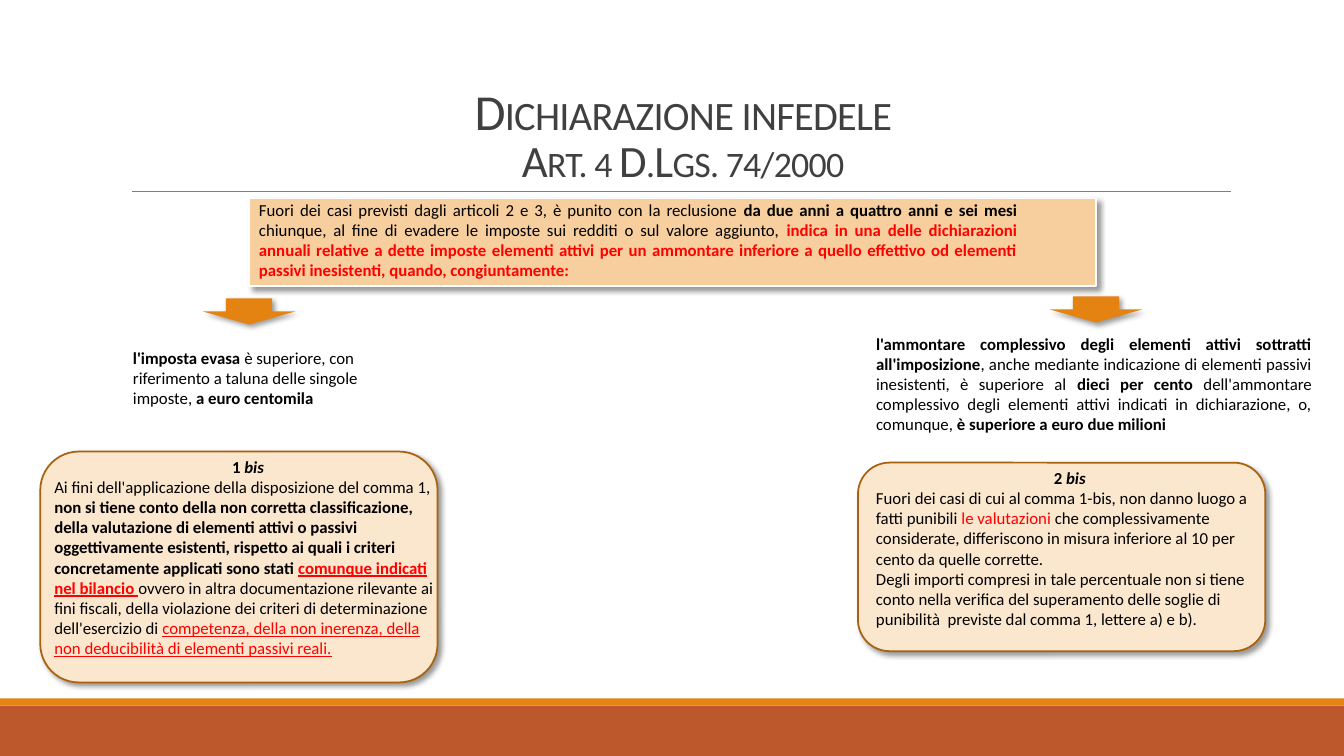
"""Build the slide on the false tax return offence and its thresholds."""
import lxml.etree
import pptx
import pptx.dml.color
import pptx.enum.shapes
import pptx.enum.text
import pptx.oxml.ns
import pptx.util

Inches = pptx.util.Inches
Pt = pptx.util.Pt
RGBColor = pptx.dml.color.RGBColor
Shape = pptx.enum.shapes.MSO_SHAPE
Align = pptx.enum.text.PP_ALIGN
qn = pptx.oxml.ns.qn

BLACK = RGBColor(0x00, 0x00, 0x00)
WHITE = RGBColor(0xFF, 0xFF, 0xFF)
RED = RGBColor(0xFF, 0x00, 0x00)
GREY = RGBColor(0x80, 0x80, 0x80)
DARK_GREY = RGBColor(0x40, 0x40, 0x40)
ORANGE = RGBColor(0xE4, 0x83, 0x12)
RUST = RGBColor(0xBD, 0x58, 0x2C)
BROWN = RGBColor(0xA9, 0x61, 0x0D)
PEACH = RGBColor(0xF7, 0xCE, 0x9D)
CREAM = RGBColor(0xFB, 0xE6, 0xCE)

FONT = "Calibri"
PLAIN = {}
BOLD = {"bold": True}
BOLD_ITALIC = {"bold": True, "italic": True}
UNDERLINED = {"underline": True}
BOLD_UNDERLINED = {"bold": True, "underline": True}

OFFENCE = [(Align.JUSTIFY, [
    ("Fuori dei casi previsti dagli articoli 2 e 3, è punito con la reclusione ", PLAIN, BLACK),
    ("da due anni a quattro anni e sei mesi ", BOLD, BLACK),
    ("chiunque, al fine di evadere le imposte sui redditi o sul valore aggiunto, ", PLAIN, BLACK),
    ("indica in una delle dichiarazioni annuali relative a dette imposte elementi attivi per un "
     "ammontare inferiore a quello effettivo od elementi passivi inesistenti, quando, "
     "congiuntamente:", BOLD, RED),
])]
EVADED_TAX = [(Align.LEFT, [
    ("l'imposta evasa ", BOLD, BLACK),
    ("è superiore, con riferimento a taluna delle singole imposte, ", PLAIN, BLACK),
    ("a euro centomila", BOLD, BLACK),
])]
HIDDEN_INCOME = [(Align.JUSTIFY, [
    ("l'ammontare complessivo degli elementi attivi sottratti all'imposizione", BOLD, BLACK),
    (", anche mediante indicazione di elementi passivi inesistenti, è superiore al ", PLAIN, BLACK),
    ("dieci per cento ", BOLD, BLACK),
    ("dell'ammontare complessivo degli elementi attivi indicati in dichiarazione, o, comunque, ",
     PLAIN, BLACK),
    ("è superiore a euro due milioni", BOLD, BLACK),
])]
COMMA_1_BIS = [
    (Align.CENTER, [("1 ", BOLD, BLACK), ("bis", BOLD_ITALIC, BLACK)]),
    (Align.LEFT, [
        ("Ai fini dell'applicazione della disposizione del comma 1, ", PLAIN, BLACK),
        ("non si tiene conto della non corretta classificazione, della valutazione di elementi "
         "attivi o passivi oggettivamente esistenti, rispetto ai quali i criteri concretamente "
         "applicati sono stati ", BOLD, BLACK),
        ("comunque indicati nel bilancio ", BOLD_UNDERLINED, RED),
        ("ovvero in altra documentazione rilevante ai fini fiscali, della violazione dei criteri "
         "di determinazione dell'esercizio di ", PLAIN, BLACK),
        ("competenza, della non inerenza, della non deducibilità di elementi passivi reali.",
         UNDERLINED, RED),
    ]),
]
COMMA_2_BIS = [
    (Align.CENTER, [("2 ", BOLD, BLACK), ("bis", BOLD_ITALIC, BLACK)]),
    (Align.LEFT, [
        ("Fuori dei casi di cui al comma 1-bis, non danno luogo a fatti punibili ", PLAIN, BLACK),
        ("le valutazioni ", PLAIN, RED),
        ("che complessivamente considerate, differiscono in misura inferiore al 10 per cento "
         "da quelle corrette.", PLAIN, BLACK),
    ]),
    (Align.LEFT, [
        ("Degli importi compresi in tale percentuale non si tiene conto nella verifica del "
         "superamento delle soglie di punibilità  previste dal comma 1, lettere a) e b).",
         PLAIN, BLACK),
    ]),
]


def place(shape, left, top, width, height):
    """Move and size a shape, in inches."""
    shape.left, shape.top = Inches(left), Inches(top)
    shape.width, shape.height = Inches(width), Inches(height)


def add_run(paragraph, text, size, color, styles):
    """Append a formatted run and return it."""
    run = paragraph.add_run()
    run.text = text
    for name, value in {"name": FONT, "size": Pt(size), **styles}.items():
        setattr(run.font, name, value)
    run.font.color.rgb = color
    return run


def add_title(slide):
    """Fill the title placeholder with two centred lines in small capitals."""
    title = slide.shapes.title
    place(title, 1.2, 0.31, 11, 1.59)
    frame = title.text_frame
    frame.word_wrap = True
    frame.auto_size = pptx.enum.text.MSO_AUTO_SIZE.NONE
    frame.vertical_anchor = pptx.enum.text.MSO_ANCHOR.BOTTOM
    paragraph = frame.paragraphs[0]
    paragraph.alignment = Align.CENTER
    paragraph.line_spacing = 0.85
    for text, size in (("Dichiarazione infedele", 36), ("Art. 4 D.Lgs. 74/2000", 32)):
        if paragraph.runs:
            paragraph.add_line_break()
        run = add_run(paragraph, text, size, DARK_GREY, PLAIN)
        properties = run.font._element
        properties.set("cap", "small")
        properties.set("spc", "-50")


def add_text(slide, box, paragraphs):
    """Add a wrapped text box with formatted paragraphs."""
    frame = slide.shapes.add_textbox(*map(Inches, box)).text_frame
    frame.word_wrap = True
    for index, (alignment, runs) in enumerate(paragraphs):
        paragraph = frame.add_paragraph() if index else frame.paragraphs[0]
        paragraph.alignment = alignment
        for text, styles, color in runs:
            add_run(paragraph, text, 12, color, styles)


def add_shadow(shape):
    """Give a shape a soft shadow towards the lower right."""
    effects = shape._element.spPr.find(qn("a:effectLst"))
    shadow = lxml.etree.SubElement(effects, qn("a:outerShdw"), blurRad=str(Pt(4)),
                                   dist=str(Pt(3)), dir="2700000", algn="tl", rotWithShape="0")
    color = lxml.etree.SubElement(shadow, qn("a:srgbClr"), val=str(BLACK))
    lxml.etree.SubElement(color, qn("a:alpha"), val="40000")


def add_panel(slide, kind, box, fill, line=None, shadow=True):
    """Add a filled shape with an optional outline and shadow."""
    shape = slide.shapes.add_shape(kind, *map(Inches, box))
    shape.shadow.inherit = False
    shape.fill.solid()
    shape.fill.fore_color.rgb = fill
    if line is None:
        shape.line.fill.background()
    else:
        shape.line.color.rgb = line
        shape.line.width = Pt(1.25)
    if shadow:
        add_shadow(shape)


def add_rule(slide, left, right, top):
    """Add the thin horizontal line below the title."""
    rule = slide.shapes.add_connector(pptx.enum.shapes.MSO_CONNECTOR.STRAIGHT,
                                      Inches(left), Inches(top), Inches(right), Inches(top))
    rule.line.color.rgb = GREY
    rule.line.width = Pt(0.5)
    lxml.etree.SubElement(rule._element.spPr, qn("a:effectLst"))


def main():
    """Build and save the slide."""
    presentation = pptx.Presentation()
    presentation.slide_width = Inches(13.33)
    presentation.slide_height = Inches(7.5)
    slide = presentation.slides.add_slide(presentation.slide_layouts[5])

    add_panel(slide, Shape.RECTANGLE, (0, 7, 13.33, 0.5), RUST, shadow=False)
    add_panel(slide, Shape.RECTANGLE, (0, 6.93, 13.33, 0.07), ORANGE, shadow=False)
    add_rule(slide, 1.31, 12.21, 1.9)
    add_title(slide)

    add_panel(slide, Shape.RECTANGLE, (2.47, 1.97, 8.4, 0.87), PEACH, WHITE)
    add_text(slide, (2.47, 1.93, 7.72, 0.91), OFFENCE)
    for left, top in ((2.01, 2.96), (10.41, 2.94)):
        add_panel(slide, Shape.DOWN_ARROW, (left, top, 0.92, 0.26), ORANGE)
    add_text(slide, (1.22, 3.4, 2.49, 0.71), EVADED_TAX)
    add_text(slide, (8.59, 3.26, 4.52, 1.11), HIDDEN_INCOME)

    add_panel(slide, Shape.ROUNDED_RECTANGLE, (0.4, 4.48, 3.94, 2.29), CREAM, BROWN)
    add_text(slide, (0.44, 4.48, 4.04, 2.12), COMMA_1_BIS)
    add_panel(slide, Shape.ROUNDED_RECTANGLE, (8.51, 4.59, 4.04, 1.87), CREAM, BROWN)
    add_text(slide, (8.59, 4.59, 4.04, 1.72), COMMA_2_BIS)

    presentation.save("out.pptx")


if __name__ == "__main__":
    main()
